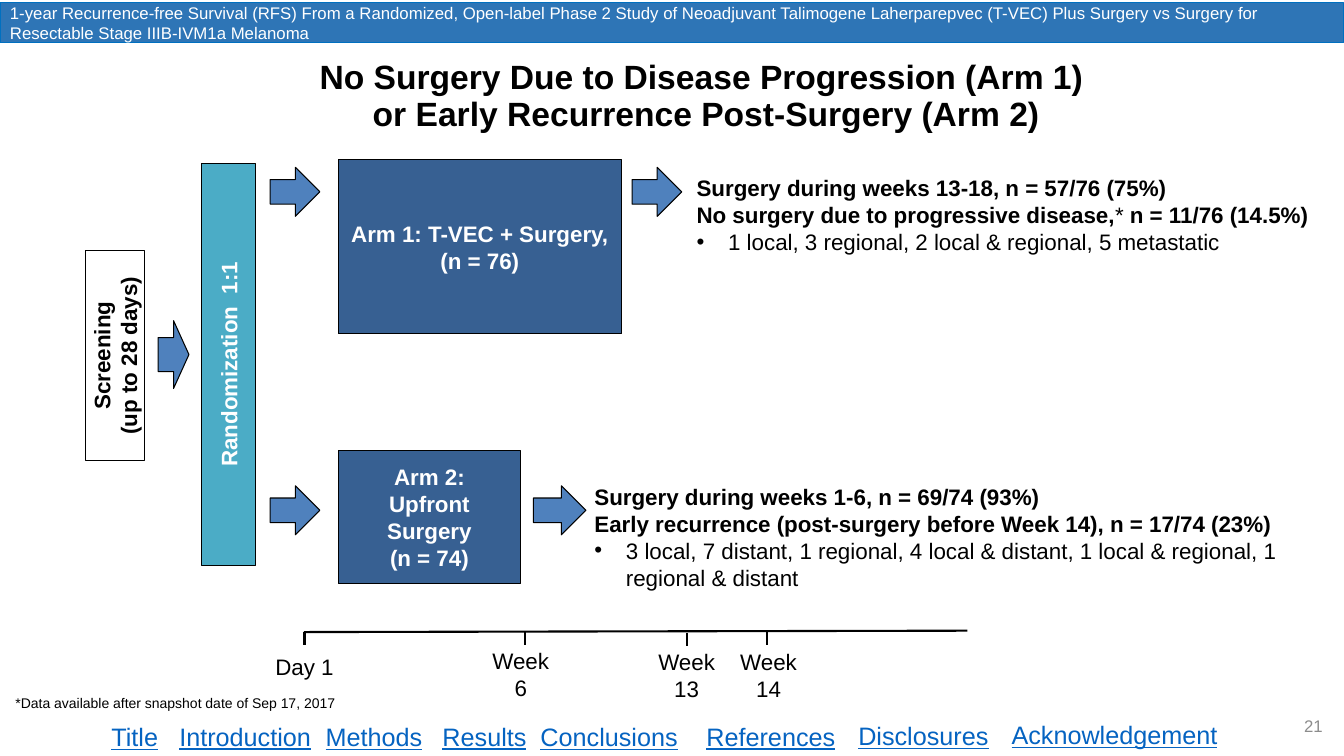
from pptx import Presentation
from pptx.dml.color import RGBColor
from pptx.enum.shapes import MSO_CONNECTOR, MSO_SHAPE
from pptx.enum.text import MSO_ANCHOR, MSO_AUTO_SIZE, PP_ALIGN
from pptx.oxml.ns import qn
from pptx.util import Pt
from lxml import etree

RECT, ARROW = MSO_SHAPE.RECTANGLE, MSO_SHAPE.RIGHT_ARROW
LEFT, CENTER, RIGHT = PP_ALIGN.LEFT, PP_ALIGN.CENTER, PP_ALIGN.RIGHT
TOP, MIDDLE = MSO_ANCHOR.TOP, MSO_ANCHOR.MIDDLE
STRAIGHT = MSO_CONNECTOR.STRAIGHT

COLORS = {
    "black": "000000", "white": "FFFFFF", "banner": "2E75B6",
    "banner_line": "0070C0", "arm": "376092", "random": "4BACC6",
    "arrow": "4F81BD", "link": "0563C1", "number": "8C8C8C",
}


def rgb(name):
    return RGBColor.from_string(COLORS[name])


def write(sp, lines, size, color, align=LEFT, anchor=TOP, bold=False, wrap=True):
    tf = sp.text_frame
    tf.word_wrap = wrap
    tf.auto_size = MSO_AUTO_SIZE.NONE
    tf.vertical_anchor = anchor
    tf.text = "\n".join(lines)
    for p in tf.paragraphs:
        p.alignment = align
        for r in p.runs:
            r.font.name = "Arial"
            r.font.size = Pt(size)
            r.font.bold = bold
            r.font.color.rgb = rgb(color)
    return tf


prs = Presentation()
prs.slide_width, prs.slide_height = Pt(960), Pt(540)
s = prs.slides.add_slide(prs.slide_layouts[5])

title = s.shapes.title
title.left, title.top, title.width, title.height = Pt(21), Pt(32.5), Pt(960), Pt(73.5)
tf = write(title, ["No Surgery Due to Disease Progression (Arm 1)\v or Early Recurrence Post-Surgery (Arm 2)"],
           24, "black", CENTER, MIDDLE, True)
tf.paragraphs[0].line_spacing = 0.9

boxes = [
    (0, 2, 960, 28.5, "banner", "banner_line", 0.75, "white", 12, LEFT, False, False,
     ["1-year Recurrence-free Survival (RFS) From a Randomized, Open-label Phase 2 Study of "
      "Neoadjuvant Talimogene Laherparepvec (T-VEC) Plus Surgery vs Surgery for "
      "Resectable Stage IIIB-IVM1a Melanoma"]),
    (61, 179, 42, 150, "white", "black", 0.75, "black", 16, CENTER, True, True,
     ["Screening", "(up to 28 days)"]),
    (144, 116.5, 38.5, 287.5, "random", "black", 0.13, "white", 16, CENTER, True, True,
     ["Randomization  1:1"]),
    (241.5, 114, 202.5, 124.5, "arm", "black", 0.75, "white", 16, CENTER, True, False,
     ["Arm 1: T-VEC + Surgery,", "(n = 76)"]),
    (241.5, 322, 130.5, 95, "arm", "black", 0.75, "white", 16, CENTER, True, False,
     ["Arm 2:", "Upfront Surgery", "(n = 74)"]),
]
for x, y, w, h, fill, line, weight, color, size, align, bold, vertical, lines in boxes:
    sp = s.shapes.add_shape(RECT, Pt(x), Pt(y), Pt(w), Pt(h))
    sp.shadow.inherit = False
    sp.fill.solid()
    sp.fill.fore_color.rgb = rgb(fill)
    sp.line.color.rgb = rgb(line)
    sp.line.width = Pt(weight)
    tf = write(sp, lines, size, color, align, MIDDLE, bold)
    if vertical:
        tf._txBody.bodyPr.set("vert", "vert270")

arrows = [(113, 229, 22, 48.5), (193, 119.5, 35.5, 35), (193, 347, 35.5, 35),
          (451.5, 119.5, 35.5, 35), (381, 347, 37.5, 35)]
for x, y, w, h in arrows:
    sp = s.shapes.add_shape(ARROW, Pt(x), Pt(y), Pt(w), Pt(h))
    sp.shadow.inherit = False
    sp.fill.solid()
    sp.fill.fore_color.rgb = rgb("arrow")
    sp.line.color.rgb = rgb("black")
    sp.line.width = Pt(0.75)

outcomes = [
    (490.5, 121, 465, 65.5,
     ["Surgery during weeks 13-18, n = 57/76 (75%)",
      "No surgery due to progressive disease,* n = 11/76 (14.5%)",
      "1 local, 3 regional, 2 local & regional, 5 metastatic"]),
    (417.5, 341.5, 506, 85,
     ["Surgery during weeks 1-6, n = 69/74 (93%)",
      "Early recurrence (post-surgery before Week 14), n = 17/74 (23%)",
      "3 local, 7 distant, 1 regional, 4 local & distant, 1 local & regional, 1 regional & distant"]),
]
for x, y, w, h, lines in outcomes:
    sp = s.shapes.add_textbox(Pt(x), Pt(y), Pt(w), Pt(h))
    tf = write(sp, lines, 16, "black", bold=True)
    for p in tf.paragraphs:
        before, star, after = p.text.partition("*")
        if star:
            p.runs[0].text = before
            for text, bold in [(star, False), (after, True)]:
                r = p.add_run()
                r.text = text
                r.font.name = "Arial"
                r.font.size = Pt(16)
                r.font.bold = bold
                r.font.color.rgb = rgb("black")
    bullet = tf.paragraphs[-1]
    bullet.runs[0].font.bold = False
    pPr = bullet._p.get_or_add_pPr()
    pPr.set("marL", str(Pt(22.5)))
    pPr.set("indent", str(Pt(-22.5)))
    etree.SubElement(pPr, qn("a:buFont")).set("typeface", "Arial")
    etree.SubElement(pPr, qn("a:buChar")).set("char", "•")

axis = [(217, 451.5, 691, 450.5)]
ticks = [(x, y, x, y + 9.5) for x, y in [(217.5, 451.5), (375, 451.5), (491, 452), (548, 451.5)]]
for x1, y1, x2, y2 in axis + ticks:
    line = s.shapes.add_connector(STRAIGHT, Pt(x1), Pt(y1), Pt(x2), Pt(y2))
    line.line.color.rgb = rgb("black")
    line.line.width = Pt(1.5)
    etree.SubElement(line._element.spPr, qn("a:effectLst"))

weeks = [("Day 1", 177, 463, 81), ("Week 6", 339, 458.5, 66),
         ("Week 13", 457, 459.5, 67), ("Week 14", 515.5, 459.5, 67)]
for label, x, y, w in weeks:
    sp = s.shapes.add_textbox(Pt(x), Pt(y), Pt(w), Pt(46))
    write(sp, [label], 16, "black", CENTER)

sp = s.shapes.add_textbox(Pt(4), Pt(492.5), Pt(244), Pt(19.5))
write(sp, ["*Data available after snapshot date of Sep 17, 2017"], 10, "black", wrap=False)

sp = s.shapes.add_textbox(Pt(908), Pt(502.5), Pt(44), Pt(31.5))
write(sp, ["21"], 12, "number", RIGHT, MIDDLE)

links = [("Title", 72.5, 512, 48), ("Introduction", 121, 511.5, 109.5),
         ("Methods", 225.5, 512, 84), ("Results", 309, 511.5, 75),
         ("Conclusions", 379, 512, 114), ("References", 497.5, 511.5, 107),
         ("Disclosures", 606, 511, 109), ("Acknowledgement", 715.5, 510.5, 163)]
for label, x, y, w in links:
    sp = s.shapes.add_textbox(Pt(x), Pt(y), Pt(w), Pt(29))
    tf = write(sp, [label], 18, "link", wrap=False)
    tf.paragraphs[0].runs[0].font.underline = True

prs.save("out.pptx")
